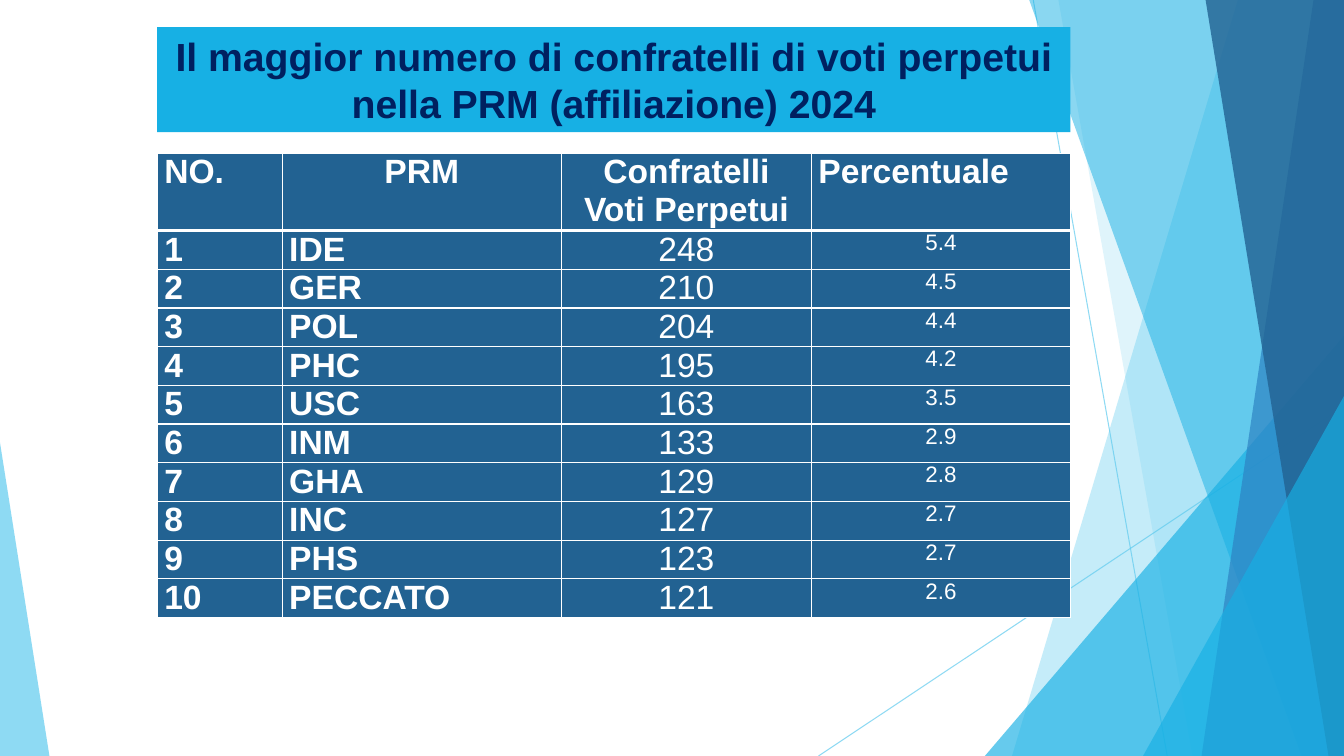
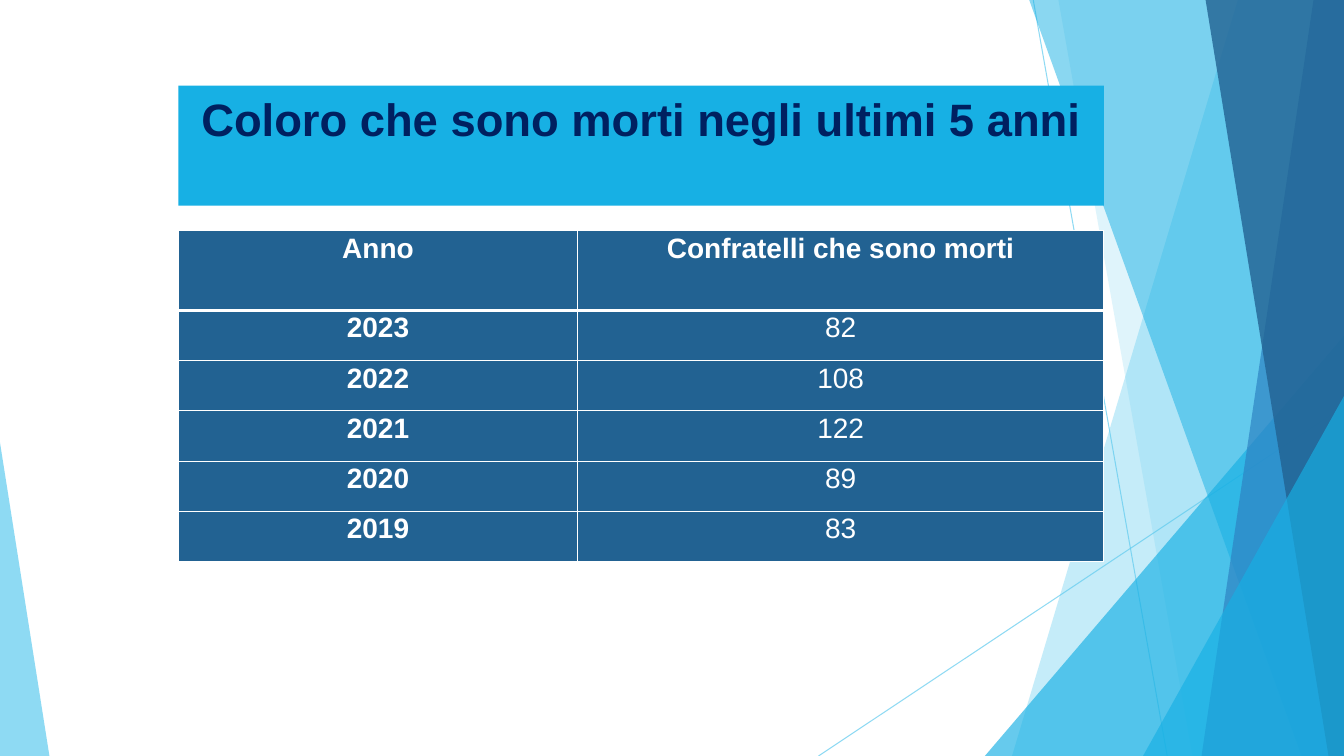
from lxml.etree import SubElement
from pptx import Presentation
from pptx.dml.color import RGBColor
from pptx.enum.shapes import MSO_CONNECTOR, MSO_SHAPE
from pptx.enum.text import MSO_ANCHOR, MSO_AUTO_SIZE, PP_ALIGN
from pptx.oxml import parse_xml
from pptx.oxml.ns import nsdecls, qn
from pptx.util import Inches, Pt

SKY, CYAN, BLUE, DEEP = "5FCBEF", "17B0E4", "2E83C3", "226292"
NAVY, WHITE = "002060", "FFFFFF"
LEFT, MID = PP_ALIGN.LEFT, PP_ALIGN.CENTER


def tint(form, code, alpha=100):
    form.solid()
    form.fore_color.rgb = RGBColor.from_string(code)
    if alpha < 100:
        for color in form._xPr.iter(qn("a:srgbClr")):
            SubElement(color, qn("a:alpha")).set("val", str(alpha * 1000))


class Deck:
    font = "Arial"

    def __init__(self):
        self.prs = Presentation()
        self.prs.slide_width = Inches(13.33)
        self.prs.slide_height = Inches(7.5)
        self.layout = self.prs.slide_layouts[5]
        for holder in list(self.layout.placeholders)[1:]:
            holder.element.getparent().remove(holder.element)
        self.slide = None

    def x(self, share):
        return round(self.prs.slide_width * share / 100)

    def y(self, share):
        return round(self.prs.slide_height * share / 100)

    def page(self):
        self.slide = self.prs.slides.add_slide(self.layout)

    def share(self, shape):
        self.layout.shapes.element.append(shape.element)

    def ray(self, x1, y1, x2, y2):
        line = self.slide.shapes.add_connector(
            MSO_CONNECTOR.STRAIGHT, self.x(x1), self.y(y1), self.x(x2), self.y(y2))
        line.line.width = Pt(0.75)
        tint(line.line.fill, SKY, 70)
        SubElement(line.element.spPr, qn("a:effectLst"))
        self.share(line)

    def paint(self, shape, code, alpha):
        shape.shadow.inherit = False
        tint(shape.fill, code, alpha)
        shape.line.fill.background()
        self.share(shape)

    def band(self, top, base, code, alpha):
        pen = self.slide.shapes.build_freeform(self.x(top), 0)
        pen.add_line_segments([(self.x(100), 0), (self.x(100), self.y(100)),
                               (self.x(base), self.y(100))], close=True)
        self.paint(pen.convert_to_shape(), code, alpha)

    def wedge(self, left, top, width, peak, code, alpha):
        shape = self.slide.shapes.add_shape(
            MSO_SHAPE.ISOSCELES_TRIANGLE, self.x(left), self.y(top),
            self.x(width), self.y(100 - top))
        shape.adjustments[0] = peak
        self.paint(shape, code, alpha)

    def decor(self):
        self.ray(76.88, 0, 86.85, 100)
        self.ray(100, 53.73, 60.9, 100)
        self.band(92.1, 75.3, SKY, 36)
        self.band(78.75, 88.73, SKY, 20)
        self.wedge(73.28, 44.4, 26.72, 1, CYAN, 66)
        self.band(76.58, 96.83, CYAN, 50)
        self.band(97.73, 89.4, BLUE, 70)
        self.band(89.7, 98.85, DEEP, 80)
        self.wedge(85.05, 52.4, 14.95, 1, CYAN, 66)
        self.wedge(0, 58.53, 3.68, 0, SKY, 70)

    def say(self, para, text, size, code, bold, align):
        para.alignment = align
        run = para.add_run()
        run.text = text
        run.font.name = self.font
        run.font.size = Pt(size)
        run.font.bold = bold
        run.font.color.rgb = RGBColor.from_string(code)

    def title(self, text, left, top, width, height, size, anchor):
        box = self.slide.shapes.title
        box.left, box.top = self.x(left), self.y(top)
        box.width, box.height = self.x(width), self.y(height)
        tint(box.fill, CYAN)
        frame = box.text_frame
        frame.word_wrap = True
        frame.auto_size = MSO_AUTO_SIZE.NONE
        frame.vertical_anchor = anchor
        self.say(frame.paragraphs[0], text, size, NAVY, True, MID)

    def edge(self, cell, row):
        props = cell._tc.get_or_add_tcPr()
        wide = {"L": 1, "R": 1, "T": 3 if row == 1 else 1, "B": 3 if row == 0 else 1}
        for spot, (side, width) in enumerate(wide.items()):
            props.insert(spot, parse_xml(
                f'<a:ln{side} {nsdecls("a")} w="{Pt(width)}"><a:solidFill>'
                f'<a:srgbClr val="{WHITE}"/></a:solidFill></a:ln{side}>'))

    def table(self, data, left, top, cols, head, step, style, after=0, space=None):
        rows = len(data)
        grid = self.slide.shapes.add_table(
            rows, len(cols), self.x(left), self.y(top), self.x(sum(cols)),
            self.y(head + step * (rows - 1))).table
        grid.first_row = grid.horz_banding = False
        for col, width in zip(grid.columns, cols):
            col.width = self.x(width)
        for r, line in enumerate(data):
            grid.rows[r].height = self.y(step if r else head)
            for c, text in enumerate(line):
                cell = grid.cell(r, c)
                cell.margin_left = cell.margin_right = Inches(0.07)
                cell.margin_top = cell.margin_bottom = 0
                tint(cell.fill, DEEP)
                self.edge(cell, r)
                para = cell.text_frame.paragraphs[0]
                para.space_after = Pt(after)
                if space:
                    para.line_spacing = space
                size, bold, align = style(r, c)
                self.say(para, text, size, WHITE, bold, align)


def rank(row, col):
    if row == 0:
        return 24, True, MID if col in (1, 2) else LEFT
    return 16 if col == 3 else 24, col < 2, MID if col > 1 else LEFT


def toll(row, col):
    return 20, row == 0 or col == 0, MID


def main():
    deck = Deck()
    deck.page()
    deck.decor()
    deck.title("Il maggior numero di confratelli di voti perpetui nella PRM "
               "(affiliazione) 2024", 11.7, 3.6, 67.95, 13.87, 28, MSO_ANCHOR.MIDDLE)
    units = [("IDE", "248", "5.4"), ("GER", "210", "4.5"), ("POL", "204", "4.4"),
             ("PHC", "195", "4.2"), ("USC", "163", "3.5"), ("INM", "133", "2.9"),
             ("GHA", "129", "2.8"), ("INC", "127", "2.7"), ("PHS", "123", "2.7"),
             ("PECCATO", "121", "2.6")]
    data = [("NO.", "PRM", "Confratelli Voti Perpetui", "Percentuale")]
    data += [(str(n), *unit) for n, unit in enumerate(units, 1)]
    deck.table(data, 11.7, 20.27, (9.3, 20.78, 18.6, 19.28), 10.24, 5.12, rank, after=10)

    deck.page()
    deck.title("Coloro che sono morti negli ultimi 5 anni",
               13.28, 11.33, 68.85, 15.87, 32.4, MSO_ANCHOR.TOP)
    data = [("Anno", "Confratelli che sono morti"), ("2023", "82"), ("2022", "108"),
            ("2021", "122"), ("2020", "89"), ("2019", "83")]
    deck.table(data, 13.28, 30.53, (29.7, 39.15), 10.53, 6.65, toll, space=1.07)
    deck.prs.save("out.pptx")


if __name__ == "__main__":
    main()
